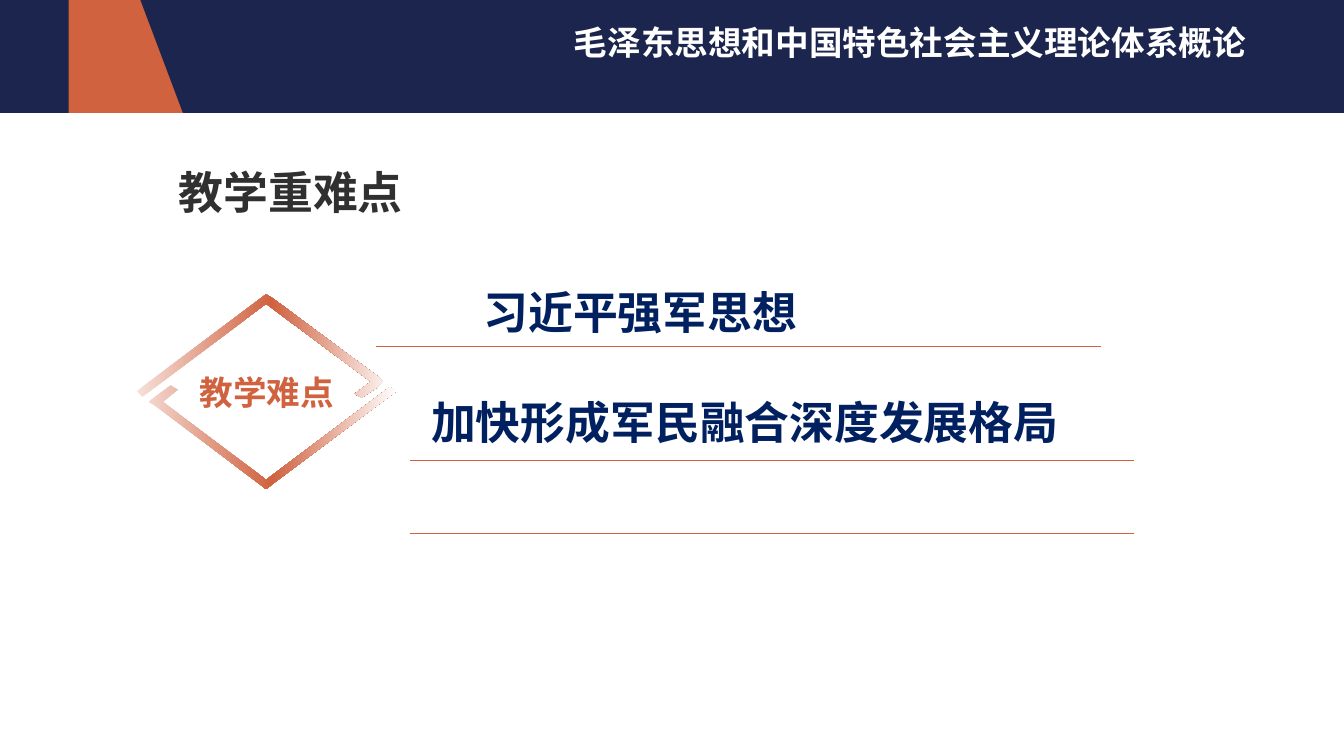
from lxml import etree
from pptx import Presentation
from pptx.dml.color import RGBColor
from pptx.enum.shapes import MSO_CONNECTOR, MSO_SHAPE
from pptx.enum.text import MSO_ANCHOR, PP_ALIGN
from pptx.oxml.ns import qn
from pptx.util import Inches, Pt

NAVY = RGBColor(0x1C, 0x25, 0x4D)
ORANGE = RGBColor(0xD0, 0x62, 0x40)
PALE = RGBColor(0xF6, 0xE0, 0xD9)
WHITE = RGBColor(0xFF, 0xFF, 0xFF)
CHARCOAL = RGBColor(0x30, 0x30, 0x30)
BLUE = RGBColor(0x00, 0x20, 0x60)
CJK_FONT = "Noto Sans CJK SC"

# Content: text, box (left, top, width, height), style, spacing, insets (left, top)
TEXTS = [
    ("毛泽东思想和中国特色社会主义理论体系概论", (1.22, 0.15, 8.62, 0.57),
     (18, CJK_FONT, WHITE), 0.9, (3.05, 0.05), MSO_ANCHOR.TOP),
    ("教学重难点", (1.25, 1.1, 4.77, 0.57),
     (24, CJK_FONT, CHARCOAL), 0.9, (0.08, 0.04), MSO_ANCHOR.BOTTOM),
    ("习近平强军思想", (3.5, 1.95, 3.5, 0.57),
     (24, "Arial", BLUE), 1.3, (0.1, 0.05), MSO_ANCHOR.TOP),
    ("加快形成军民融合深度发展格局", (3.11, 2.89, 6.22, 0.5),
     (24, "Calibri", BLUE), 1.0, (0.1, 0.05), MSO_ANCHOR.TOP),
]
DIAMOND_LABEL = "教学难点"

# Rules under the points: left, top
RULES = [(2.8, 2.58), (3.05, 3.43), (3.05, 3.97)]
RULE_WIDTH = 5.39

# Outlines in hundredths of an inch
HEADER_ACCENT = [[(51, -1), (104, -1), (136, 84), (51, 84)]]
DIAMOND = [
    [(127, 287), (132, 290), (121, 299), (198, 357), (290, 288), (295, 291),
     (203, 360), (198, 364), (193, 360), (116, 302), (111, 299), (116, 295)],
    [(198, 219), (203, 222), (281, 280), (285, 284), (281, 288), (269, 296),
     (264, 293), (276, 284), (198, 226), (106, 295), (102, 291)],
]
DIAMOND_STOPS = [(0, PALE), (52, ORANGE), (100, WHITE)]


def add_run(paragraph, text, size, font_name, color):
    run = paragraph.add_run()
    run.text = text
    run.font.size = Pt(size)
    run.font.name = font_name
    run.font.bold = True
    run.font.color.rgb = color
    latin = run.font._element.find(qn("a:latin"))
    east_asian = etree.Element(qn("a:ea"), typeface=CJK_FONT)
    latin.addnext(east_asian)


def add_outline(slide, contours):
    first, *others = contours
    builder = slide.shapes.build_freeform(*first[0], scale=Inches(0.01))
    builder.add_line_segments(first[1:], close=True)
    for contour in others:
        builder.move_to(*contour[0])
        builder.add_line_segments(contour[1:], close=True)
    shape = builder.convert_to_shape()
    shape.shadow.inherit = False
    shape.line.fill.background()
    return shape


def fill_gradient(shape, stops):
    shape.fill.gradient()
    shape.fill.gradient_angle = 0
    stop_list = shape._element.spPr.find(qn("a:gradFill")).find(qn("a:gsLst"))
    for stop in list(stop_list):
        stop_list.remove(stop)
    for percent, color in stops:
        stop = etree.SubElement(stop_list, qn("a:gs"), pos=str(percent * 1000))
        etree.SubElement(stop, qn("a:srgbClr"), val=str(color))


# A 16:9 slide
presentation = Presentation()
presentation.slide_width = Inches(10)
presentation.slide_height = presentation.slide_width * 9 // 16
slide = presentation.slides.add_slide(presentation.slide_layouts[6])

# Header band and its accent
band = slide.shapes.add_shape(MSO_SHAPE.RECTANGLE, 0, 0,
                              presentation.slide_width, Inches(0.84))
band.shadow.inherit = False
band.fill.solid()
band.fill.fore_color.rgb = NAVY
band.line.fill.background()
accent = add_outline(slide, HEADER_ACCENT)
accent.fill.solid()
accent.fill.fore_color.rgb = ORANGE

# Diamond with its label
diamond = add_outline(slide, DIAMOND)
fill_gradient(diamond, DIAMOND_STOPS)
diamond.text_frame.vertical_anchor = MSO_ANCHOR.MIDDLE
label = diamond.text_frame.paragraphs[0]
label.alignment = PP_ALIGN.CENTER
add_run(label, DIAMOND_LABEL, 18, "Calibri", ORANGE)

# Rules
for left, top in RULES:
    rule = slide.shapes.add_connector(MSO_CONNECTOR.STRAIGHT, Inches(left), Inches(top),
                                      Inches(left + RULE_WIDTH), Inches(top))
    rule.line.color.rgb = ORANGE
    rule.line.width = Pt(0.5)
    etree.SubElement(rule._element.spPr, qn("a:effectLst"))

# Header, title and points
for text, box, style, spacing, (inset_left, inset_top), anchor in TEXTS:
    frame = slide.shapes.add_textbox(*map(Inches, box)).text_frame
    frame.word_wrap = True
    frame.vertical_anchor = anchor
    frame.margin_left = Inches(inset_left)
    frame.margin_top = frame.margin_bottom = Inches(inset_top)
    paragraph = frame.paragraphs[0]
    paragraph.line_spacing = spacing
    add_run(paragraph, text, *style)

presentation.save("out.pptx")
